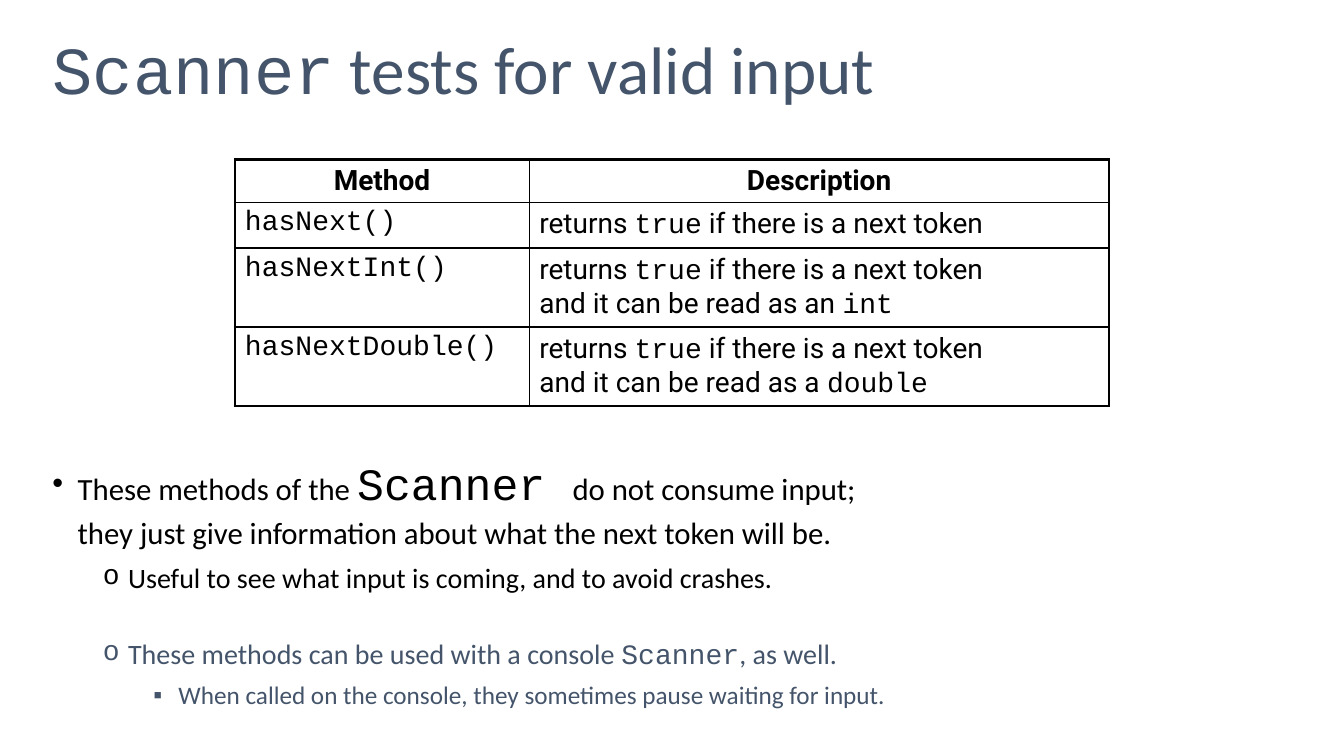
from lxml import etree
from pptx import Presentation
from pptx.dml.color import RGBColor
from pptx.enum.text import MSO_ANCHOR, MSO_AUTO_SIZE, PP_ALIGN
from pptx.oxml.ns import qn
from pptx.util import Inches, Pt

LEFT, CENTER = PP_ALIGN.LEFT, PP_ALIGN.CENTER
TOP, MIDDLE = MSO_ANCHOR.TOP, MSO_ANCHOR.MIDDLE
NO_AUTOFIT = MSO_AUTO_SIZE.NONE

BLACK = RGBColor(0x00, 0x00, 0x00)
SLATE = RGBColor(0x44, 0x54, 0x6A)

SANS, CODE, TABLE_FONT = "Calibri", "Courier New", "Roboto"
THIN, THICK = Pt(1), Pt(2.25)
BULLETS = [("•", "Arial"), ("o", CODE), ("▪", "Arial")]
INDENTS = [0.25, 0.75, 1.25]


def apply(target, values):
    for name, value in values.items():
        setattr(target, name, value)


class LectureSlide:
    """Holds the slide and its text style."""

    def __init__(self, prs):
        self.slide = prs.slides.add_slide(prs.slide_layouts[1])

    def add_pieces(self, paragraph, pieces, size, color, font=SANS, bold=False):
        """Pieces are plain strings, or (code, size) pairs set in the code font."""
        for piece in pieces:
            is_code = isinstance(piece, tuple)
            text, piece_size = piece if is_code else (piece, size)
            for number, line in enumerate(text.split("\n")):
                if number:
                    paragraph.add_line_break()
                if not line:
                    continue
                run = paragraph.add_run()
                run.text = line
                apply(run.font, {"name": CODE if is_code else font,
                                 "size": Pt(piece_size), "bold": bold})
                run.font.color.rgb = color

    def place(self, placeholder, left, top, width, height, anchor):
        apply(placeholder, {"left": Inches(left), "top": Inches(top),
                            "width": Inches(width), "height": Inches(height)})
        apply(placeholder.text_frame, {"word_wrap": True, "auto_size": NO_AUTOFIT,
                                       "vertical_anchor": anchor})
        return placeholder.text_frame

    def title(self, pieces, box):
        heading = self.place(self.slide.shapes.title, *box, MIDDLE).paragraphs[0]
        apply(heading, {"alignment": LEFT, "line_spacing": 0.9})
        self.add_pieces(heading, pieces, 48, SLATE)

    def bullets(self, points, box):
        frame = self.place(self.slide.placeholders[1], *box, TOP)
        for number, (level, pieces, size, color, before) in enumerate(points):
            point = frame.add_paragraph() if number else frame.paragraphs[0]
            apply(point, {"level": level, "alignment": LEFT, "line_spacing": 1.1,
                          "space_before": Pt(before), "space_after": Pt(0)})
            self.add_pieces(point, pieces, size, color)
            self.mark(point, level)

    def mark(self, point, level):
        props = point._p.get_or_add_pPr()
        props.set("marL", str(Inches(INDENTS[level])))
        props.set("indent", str(Inches(-0.25)))
        char, font = BULLETS[level]
        etree.SubElement(props, qn("a:buFont"), typeface=font)
        etree.SubElement(props, qn("a:buChar"), char=char)

    def table(self, rows, left, top, widths, heights):
        table = self.slide.shapes.add_table(
            len(rows), len(widths), Inches(left), Inches(top),
            Inches(sum(widths)), Inches(sum(heights))).table
        apply(table, {"first_row": False, "horz_banding": False})
        for column, width in zip(table.columns, widths):
            column.width = Inches(width)
        for r, (row, height) in enumerate(zip(rows, heights)):
            table.rows[r].height = Inches(height)
            for c, pieces in enumerate(row):
                cell = table.cell(r, c)
                apply(cell, {"margin_left": Inches(0.1), "margin_right": Inches(0.1),
                             "margin_top": Inches(0.05), "margin_bottom": Inches(0.05),
                             "vertical_anchor": TOP})
                paragraph = cell.text_frame.paragraphs[0]
                paragraph.alignment = LEFT if r else CENTER
                self.add_pieces(paragraph, pieces, 20, BLACK, TABLE_FONT, bold=r == 0)
                cell.fill.background()
                self.borders(cell, {"lnL": c == 0, "lnR": c == len(widths) - 1,
                                    "lnT": r == 0, "lnB": r == len(rows) - 1})

    def borders(self, cell, outer_edges):
        props = cell._tc.get_or_add_tcPr()
        for position, (edge, is_outer) in enumerate(outer_edges.items()):
            line = etree.Element(qn(f"a:{edge}"), w=str(THICK if is_outer else THIN))
            fill = etree.SubElement(line, qn("a:solidFill"))
            etree.SubElement(fill, qn("a:srgbClr"), val=str(BLACK))
            props.insert(position, line)


def main():
    prs = Presentation()
    prs.slide_width, prs.slide_height = Inches(13.33), Inches(7.5)
    lecture = LectureSlide(prs)

    # Title
    lecture.title([("Scanner", 48), " tests for valid input"], (0.42, 0, 12.5, 1.45))

    # What the methods mean for a program
    lecture.bullets([
        (0, ["These methods of the ", ("Scanner ", 32),
             "do not consume input;\n"
             "they just give information about what the next token will be."],
         22, BLACK, 0),
        (1, ["Useful to see what input is coming, and to avoid crashes."], 20, BLACK, 5),
        (1, ["These methods can be used with a console ", ("Scanner", 20), ", as well."],
         20, SLATE, 27.5),
        (2, ["When called on the console, they sometimes pause waiting for input."],
         18, SLATE, 5),
    ], (0.42, 4.42, 12.5, 2.69))

    # Method table
    next_token = ["returns ", ("true", 20), " if there is a next token"]
    lecture.table([
        (["Method"], ["Description"]),
        ([("hasNext()", 20)], next_token),
        ([("hasNextInt()", 20)],
         next_token + ["\nand it can be read as an ", ("int", 20)]),
        ([("hasNextDouble()", 20)],
         next_token + ["\nand it can be read as a ", ("double", 20)]),
    ], 2.33, 1.58, [2.92, 5.75], [0.43, 0.45, 0.77, 0.77])

    prs.save("out.pptx")


if __name__ == "__main__":
    main()
